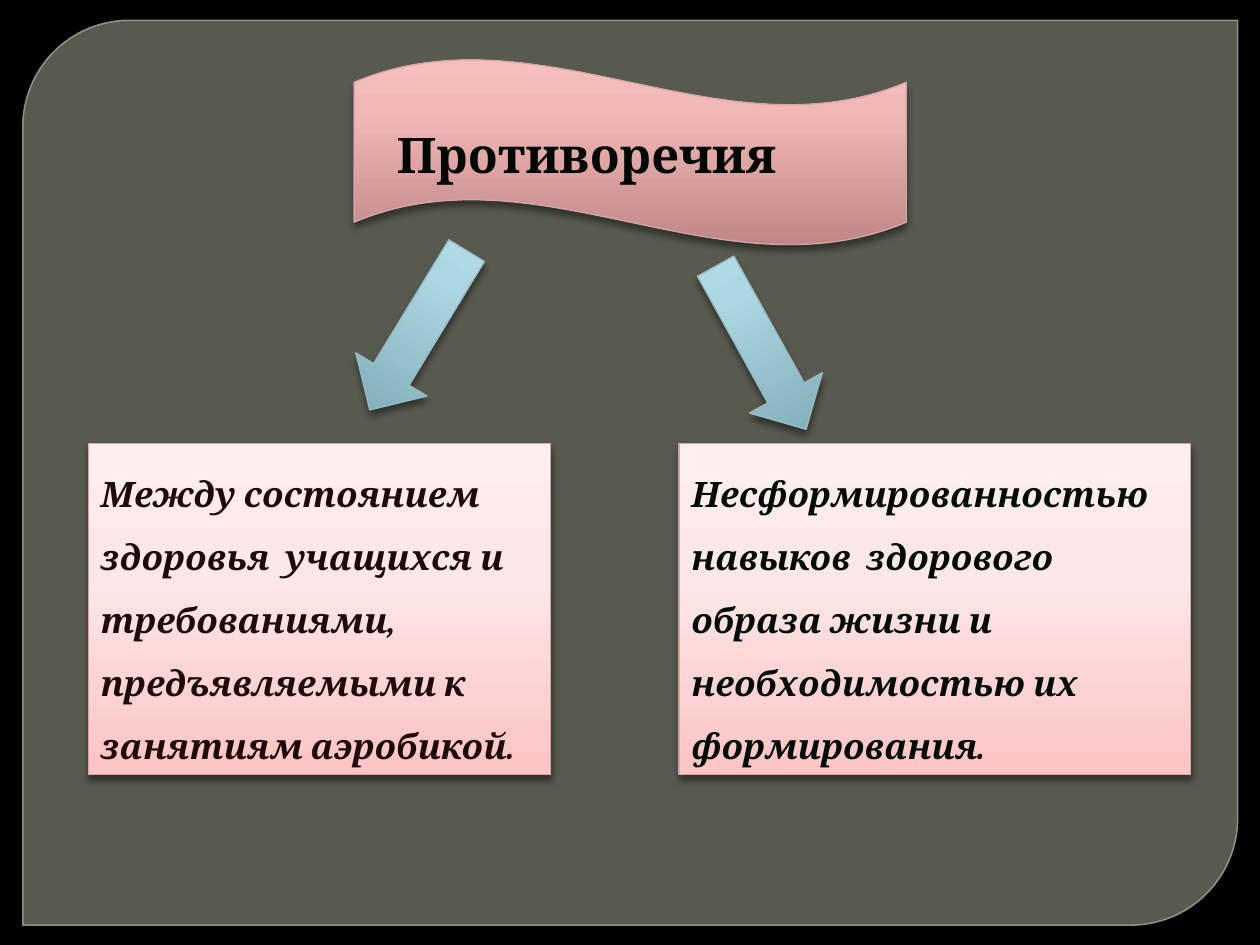
import pptx
import pptx.dml.color
import pptx.enum.shapes
import pptx.enum.text
import pptx.oxml
import pptx.oxml.ns
import pptx.util
from lxml import etree

SHAPES = pptx.enum.shapes.MSO_SHAPE
ANCHORS = pptx.enum.text.MSO_ANCHOR
ALIGNS = pptx.enum.text.PP_ALIGN
qn = pptx.oxml.ns.qn

COLORS = {
    "backdrop": "000000",
    "frame": "888B7B",
    "frame_edge": "9DA090",
    "pink_edge": "D3A6A6",
    "blue_edge": "98BAC3",
    "heading": "000804",
    "health": "1F0A0A",
    "skills": "000C05",
    "shadow": "000000",
}
BANNER_STOPS = ((0, "C18787"), (72, "F2B8B8"), (100, "F7BEBE"))
ARROW_STOPS = ((0, "7BA7B3"), (72, "ACD7E2"), (100, "B4DDE9"))
STATEMENT_STOPS = ((0, "FCC4C4"), (62, "FDE8E8"), (100, "FEEEEE"))

HEADING_FONT = {"name": "Cambria", "size": pptx.util.Pt(28), "bold": True}
STATEMENT_FONT = {"name": "Cambria", "size": pptx.util.Pt(20), "bold": True, "italic": True}
HEADING_PARAGRAPH = {"alignment": ALIGNS.LEFT}
STATEMENT_PARAGRAPH = {"alignment": ALIGNS.LEFT, "line_spacing": 1.5}


def apply_format(target, values):
    for attribute, value in values.items():
        setattr(target, attribute, value)


def rgb(name):
    return pptx.dml.color.RGBColor.from_string(COLORS[name])


def lengths(box):
    return [pptx.util.Cm(value) for value in box]


def add_color(parent, color, opacity=100):
    node = etree.SubElement(parent, qn("a:srgbClr"), val=color)
    if opacity < 100:
        etree.SubElement(node, qn("a:alpha"), val=str(opacity * 1000))


def set_opacity(solid_fill, opacity):
    etree.SubElement(solid_fill[0], qn("a:alpha"), val=str(opacity * 1000))


def set_gradient(shape, stops):
    shape.fill.gradient()
    gradient = shape._element.spPr.find(qn("a:gradFill"))
    stop_list = gradient.find(qn("a:gsLst"))
    for stop in list(stop_list):
        stop_list.remove(stop)
    for position, color in stops:
        add_color(etree.SubElement(stop_list, qn("a:gs"), pos=str(position * 1000)), color)
    gradient.find(qn("a:lin")).set("ang", str(270 * 60000))


def set_edge(shape, color, width):
    shape.line.color.rgb = rgb(color)
    shape.line.width = pptx.util.Pt(width)


def draw_raised(slide, kind, box, stops, edge):
    raised = slide.shapes.add_shape(kind, *lengths(box))
    set_gradient(raised, stops)
    set_edge(raised, edge, 0.75)
    raised.shadow.inherit = False
    shadow = etree.SubElement(
        raised._element.spPr.find(qn("a:effectLst")), qn("a:outerShdw"),
        blurRad=str(pptx.util.Pt(4)), dist=str(pptx.util.Pt(3)),
        dir=str(90 * 60000), rotWithShape="0")
    add_color(shadow, COLORS["shadow"], 43)
    return raised


def write_text(holder, wording, color, font_format, paragraph_format, anchor):
    apply_format(holder.text_frame, {"word_wrap": True, "vertical_anchor": anchor})
    paragraph = holder.text_frame.paragraphs[0]
    apply_format(paragraph, paragraph_format)
    run = paragraph.add_run()
    run.text = wording
    apply_format(run.font, font_format)
    run.font.color.rgb = rgb(color)


def draw_frame(slide, box):
    frame = slide.shapes.add_shape(SHAPES.ROUND_2_DIAG_RECTANGLE, *lengths(box))
    frame.adjustments[0] = 0.118
    frame.adjustments[1] = 0
    frame.shadow.inherit = False
    frame.fill.solid()
    frame.fill.fore_color.rgb = rgb("frame")
    set_edge(frame, "frame_edge", 0.87)
    properties = frame._element.spPr
    set_opacity(properties.find(qn("a:solidFill")), 65)
    set_opacity(properties.find(qn("a:ln")).find(qn("a:solidFill")), 88)


def draw_banner(slide, box, wording):
    left, top, width, height = box
    draw_raised(slide, SHAPES.WAVE, box, BANNER_STOPS, "pink_edge")
    heading = slide.shapes.add_textbox(*lengths((left + 0.61, top + 1.2, width - 1.2, 1.45)))
    write_text(heading, wording, "heading", HEADING_FONT, HEADING_PARAGRAPH, ANCHORS.TOP)


def draw_arrow(slide, box, rotation):
    arrow = draw_raised(slide, SHAPES.DOWN_ARROW, box, ARROW_STOPS, "blue_edge")
    arrow.rotation = rotation


def draw_statement(slide, box, wording, color):
    statement = draw_raised(slide, SHAPES.RECTANGLE, box, STATEMENT_STOPS, "pink_edge")
    write_text(statement, wording, color, STATEMENT_FONT, STATEMENT_PARAGRAPH, ANCHORS.MIDDLE)


def main():
    deck = pptx.Presentation()
    apply_format(deck, {"slide_width": pptx.util.Cm(25.4), "slide_height": pptx.util.Cm(19.05)})
    slide = deck.slides.add_slide(deck.slide_layouts[6])
    slide.background.fill.solid()
    slide.background.fill.fore_color.rgb = rgb("backdrop")

    draw_frame(slide, (0.46, 0.41, 24.49, 18.24))
    draw_banner(slide, (7.14, 1.19, 11.13, 3.76), "Противоречия")
    draw_arrow(slide, (7.59, 4.78, 1.68, 3.76), 31.3)
    draw_statement(
        slide, (1.78, 8.94, 9.32, 6.68),
        "Между состоянием здоровья  учащихся и требованиями, "
        "предъявляемыми к занятиям аэробикой.", "health")
    draw_arrow(slide, (14.5, 5.13, 1.68, 3.76), 331)
    draw_statement(
        slide, (13.69, 8.94, 10.31, 6.68),
        "Несформированностью навыков  здорового образа жизни и "
        "необходимостью их формирования.", "skills")
    deck.save("out.pptx")


if __name__ == "__main__":
    main()
